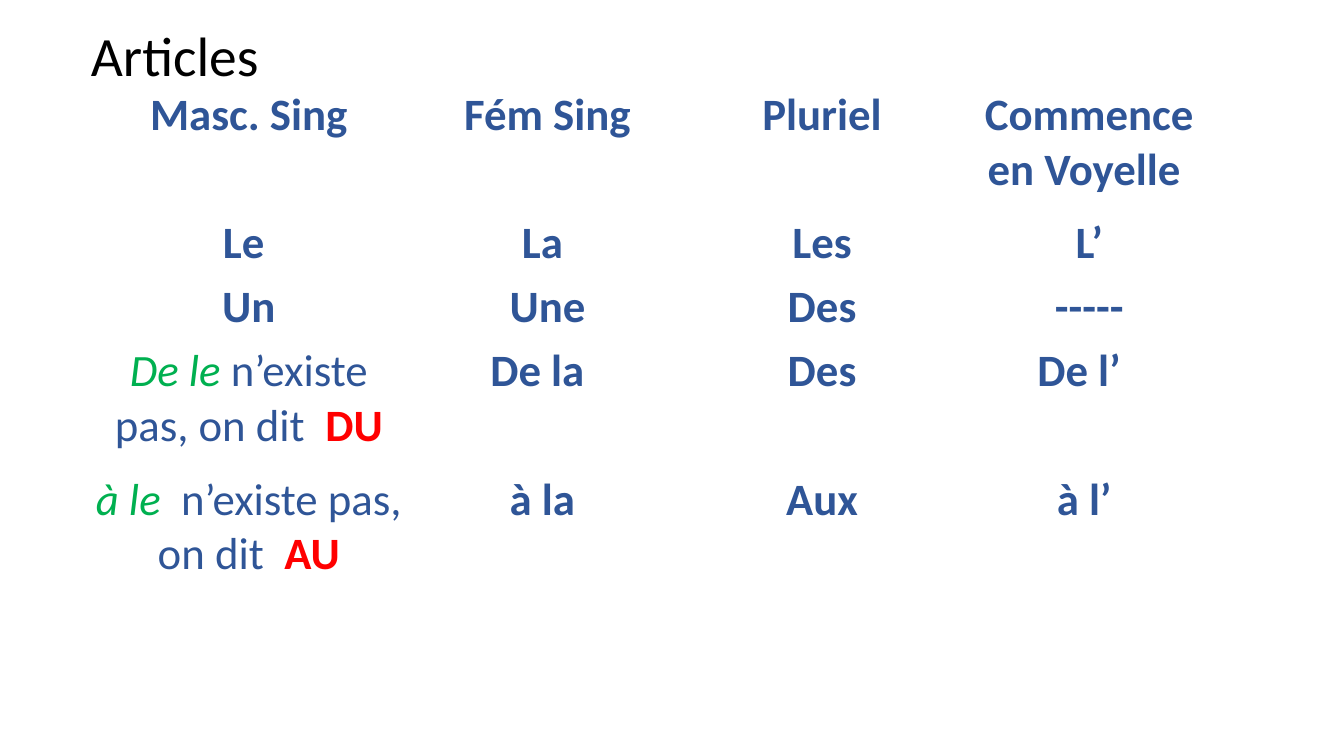
import pptx
import pptx.dml.color
import pptx.enum.text
import pptx.oxml
import pptx.oxml.ns
import pptx.util

PX = 9525
FONT = "Calibri"
COLORS = {"title": "000000", "main": "2F5597", "wrong": "00B050",
          "answer": "FF0000", "border": "FFFFFF"}
COL_WIDTHS = [320, 249, 274, 235]
ROW_HEIGHTS = [122, 61, 61, 122, 122]
# A plain string is a bold run; a list holds (text, style) runs.
ARTICLES = [
    ["Masc. Sing", "Fém Sing", "Pluriel", "Commence en Voyelle "],
    ["Le ", "La ", "Les", "L’"],
    ["Un", "Une", "Des", "-----"],
    [[("De le ", "wrong"), ("n’existe pas, on dit  ", "main"), ("DU", "answer")],
     "De la  ", "Des", "De l’  "],
    [[("à le  ", "wrong"), ("n’existe pas, on dit  ", "main"), ("AU", "answer")],
     "à la ", "Aux", "à l’ "],
]


def px(n):
    return pptx.util.Emu(n * PX)


def add_run(p, text, size, color, bold=False, italic=False):
    r = p.add_run()
    r.text = text
    r.font.name = FONT
    r.font.size = pptx.util.Pt(size)
    r.font.bold = bold
    r.font.italic = italic
    r.font.color.rgb = pptx.dml.color.RGBColor.from_string(COLORS[color])


def set_borders(cell, top, bottom):
    """Draw the four cell borders; top and bottom are widths in points."""
    tc_pr = cell._tc.get_or_add_tcPr()
    sides = [("lnL", 1), ("lnR", 1), ("lnT", top), ("lnB", bottom)]
    for i, (side, width) in enumerate(sides):
        tc_pr.insert(i, pptx.oxml.parse_xml(
            f'<a:{side} {pptx.oxml.ns.nsdecls("a")} w="{pptx.util.Pt(width)}">'
            f'<a:solidFill><a:srgbClr val="{COLORS["border"]}"/></a:solidFill>'
            f'</a:{side}>'))


def fill_cell(cell, content):
    cell.fill.background()
    cell.margin_left = cell.margin_right = px(7)
    cell.margin_top = cell.margin_bottom = 0
    p = cell.text_frame.paragraphs[0]
    p.alignment = pptx.enum.text.PP_ALIGN.CENTER
    if isinstance(content, str):
        add_run(p, content, 32, "main", bold=True)
    else:
        for text, style in content:
            add_run(p, text, 32, style, style == "answer", style == "wrong")


def add_title(s, text, left, top, width, height):
    sp = s.shapes.title
    sp.left, sp.top, sp.width, sp.height = map(px, (left, top, width, height))
    tf = sp.text_frame
    tf.auto_size = pptx.enum.text.MSO_AUTO_SIZE.NONE
    tf.vertical_anchor = pptx.enum.text.MSO_ANCHOR.MIDDLE
    p = tf.paragraphs[0]
    p.alignment = pptx.enum.text.PP_ALIGN.LEFT
    p.line_spacing = 0.9
    add_run(p, text, 39.6, "title")


def add_article_table(s, left, top):
    table = s.shapes.add_table(
        len(ROW_HEIGHTS), len(COL_WIDTHS), px(left), px(top),
        px(sum(COL_WIDTHS)), px(sum(ROW_HEIGHTS))).table
    table.first_row = table.horz_banding = False
    for column, width in zip(table.columns, COL_WIDTHS):
        column.width = px(width)
    last = len(ROW_HEIGHTS) - 1
    for i, (row, height) in enumerate(zip(table.rows, ROW_HEIGHTS)):
        row.height = px(height)
        for cell, content in zip(row.cells, ARTICLES[i]):
            fill_cell(cell, content)
            set_borders(cell, 3 if i == last else 1, 3 if i == 0 else 1)


def main():
    prs = pptx.Presentation()
    prs.slide_width, prs.slide_height = px(1280), px(720)
    s = prs.slides.add_slide(prs.slide_layouts.get_by_name("Title Only"))
    add_title(s, "Articles", 77, 26, 1104, 59)
    add_article_table(s, 77, 84)
    prs.save("out.pptx")


if __name__ == "__main__":
    main()
